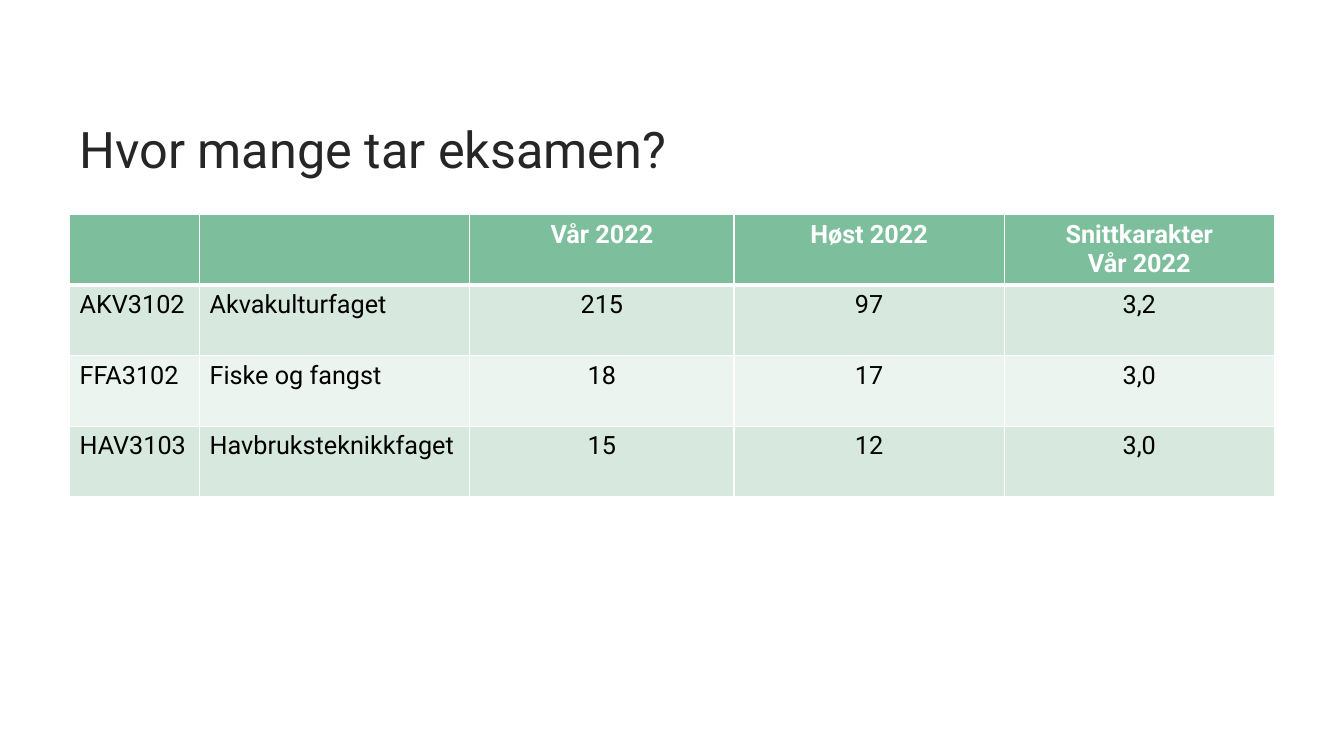
import pptx
import pptx.dml.color
import pptx.enum.text
import pptx.oxml
import pptx.oxml.ns
import pptx.util
from pptx.util import Inches

COLORS = {
    "title": "262626",
    "header": "7DBF9D",
    "odd_row": "D7E8DF",
    "even_row": "ECF4EF",
    "white": "FFFFFF",
    "black": "000000",
}
LEFT, WIDTH = 0.69, 11.96
COLUMN_WIDTHS = [1.29, 2.68, 2.62, 2.68, 2.68]
ROW_HEIGHT = 0.7
FIRST_CENTERED_COLUMN = 2
EXAM_ROWS = [
    ["", "", "Vår 2022", "Høst 2022", "Snittkarakter\nVår 2022"],
    ["AKV3102", "Akvakulturfaget", "215", "97", "3,2"],
    ["FFA3102", "Fiske og fangst", "18", "17", "3,0"],
    ["HAV3103", "Havbruksteknikkfaget", "15", "12", "3,0"],
]


class SlideBuilder:
    font = "Roboto"

    def __init__(self, slide):
        self.slide = slide

    def color(self, name):
        return pptx.dml.color.RGBColor.from_string(COLORS[name])

    def add_text(self, paragraph, text, size, color, bold=False):
        run = paragraph.add_run()
        run.text = text
        run.font.name = self.font
        run.font.size = pptx.util.Pt(size)
        run.font.bold = bold
        run.font.color.rgb = self.color(color)

    def title(self, text, left, top, width, height):
        box = self.slide.shapes.add_textbox(
            Inches(left), Inches(top), Inches(width), Inches(height))
        frame = box.text_frame
        frame.word_wrap = True
        frame.vertical_anchor = pptx.enum.text.MSO_ANCHOR.BOTTOM
        frame.margin_top = 0
        frame.paragraphs[0].line_spacing = 0.9
        self.add_text(frame.paragraphs[0], text, 36, "title")

    def borders(self, cell, widths):
        """Draw white cell edges; widths maps L, R, T and B to points."""
        properties = cell._tc.get_or_add_tcPr()
        for side, points in widths.items():
            properties.append(pptx.oxml.parse_xml(
                f'<a:ln{side} {pptx.oxml.ns.nsdecls("a")} w="{pptx.util.Pt(points)}">'
                f'<a:solidFill><a:srgbClr val="{COLORS["white"]}"/></a:solidFill>'
                f'</a:ln{side}>'))

    def cell(self, cell, text, fill, color, bold, centered, border_widths):
        self.borders(cell, border_widths)
        cell.fill.solid()
        cell.fill.fore_color.rgb = self.color(fill)
        if not text:
            return
        frame = cell.text_frame
        for index, line in enumerate(text.split("\n")):
            paragraph = frame.add_paragraph() if index else frame.paragraphs[0]
            if centered:
                paragraph.alignment = pptx.enum.text.PP_ALIGN.CENTER
            self.add_text(paragraph, line, 18, color, bold)

    def table(self, rows, left, top, column_widths, row_height):
        table = self.slide.shapes.add_table(
            len(rows), len(column_widths), Inches(left), Inches(top),
            Inches(sum(column_widths)), Inches(row_height * len(rows))).table
        for column, width in zip(table.columns, column_widths):
            column.width = Inches(width)
        for r, texts in enumerate(rows):
            table.rows[r].height = Inches(row_height)
            is_header = r == 0
            fill = "header" if is_header else "odd_row" if r % 2 else "even_row"
            border_widths = {"L": 1, "R": 1,
                             "T": 3 if r == 1 else 1,
                             "B": 3 if is_header else 1}
            for c, text in enumerate(texts):
                self.cell(table.cell(r, c), text, fill,
                          "white" if is_header else "black", is_header,
                          c >= FIRST_CENTERED_COLUMN, border_widths)


def main():
    presentation = pptx.Presentation()
    presentation.slide_width = Inches(13.33)
    presentation.slide_height = Inches(7.5)
    builder = SlideBuilder(
        presentation.slides.add_slide(presentation.slide_layouts[6]))
    builder.title("Hvor mange tar eksamen?", LEFT, 0.69, WIDTH, 1.14)
    builder.table(EXAM_ROWS, LEFT, 2.13, COLUMN_WIDTHS, ROW_HEIGHT)
    presentation.save("out.pptx")


if __name__ == "__main__":
    main()
